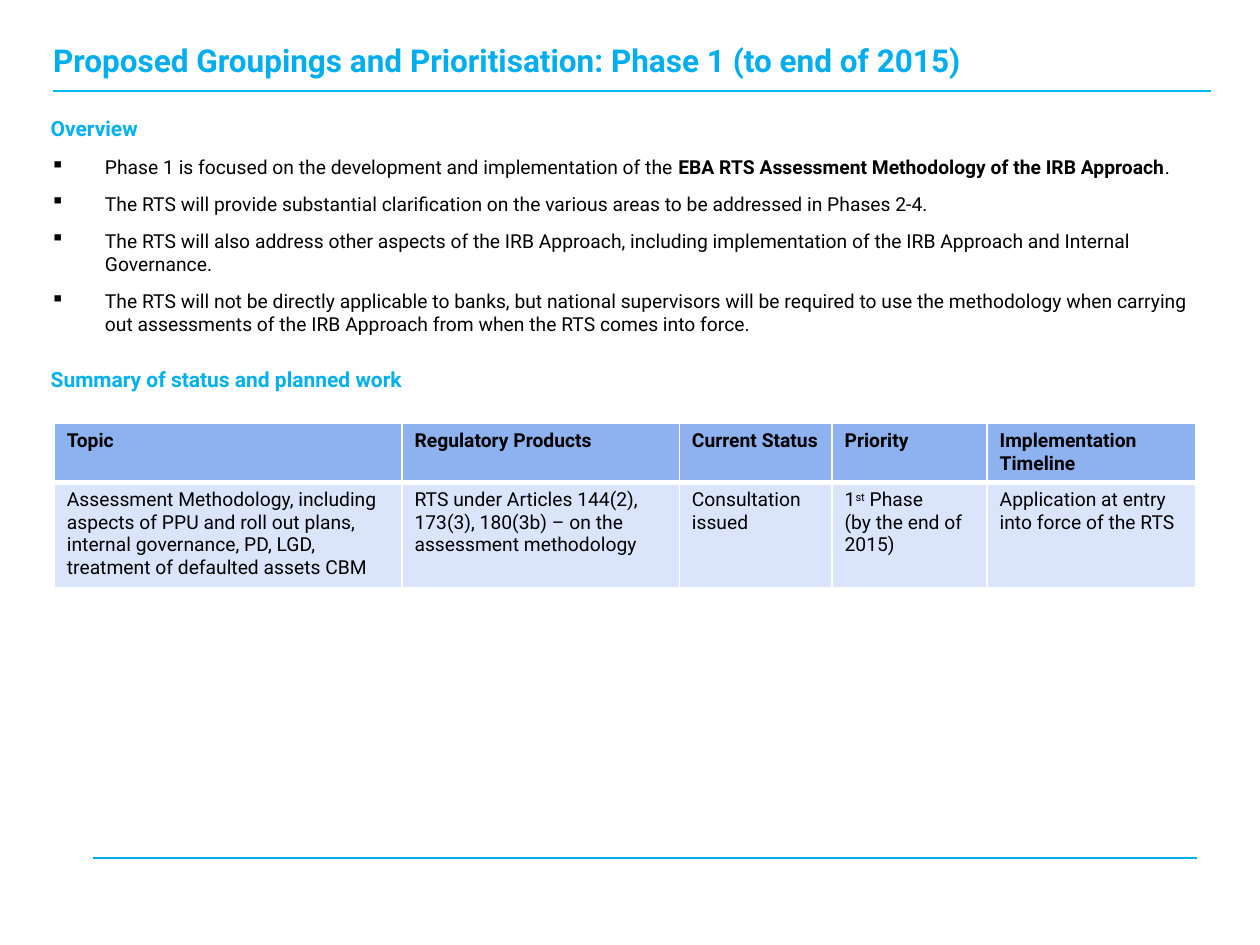
import pptx
import pptx.dml.color
import pptx.enum.shapes
import pptx.enum.text
import pptx.oxml
import pptx.oxml.ns
import pptx.util
from lxml import etree

Pt = pptx.util.Pt
RGBColor = pptx.dml.color.RGBColor
qn = pptx.oxml.ns.qn

BLACK = RGBColor(0x00, 0x00, 0x00)
WHITE = RGBColor(0xFF, 0xFF, 0xFF)
TITLE_BLUE = RGBColor(0x00, 0xAE, 0xEF)
RULE_BLUE = RGBColor(0x00, 0xB9, 0xF1)
HEADING_BLUE = RGBColor(0x00, 0xB0, 0xF0)
HEADER_FILL = RGBColor(0x8D, 0xB2, 0xEF)
BODY_FILL = RGBColor(0xDA, 0xE5, 0xFC)
FONT = "Roboto"
HANGING = 31

BULLETS = [
    [("Phase 1 is focused on the development and implementation of the ", False),
     ("EBA RTS Assessment Methodology of the IRB Approach", True),
     (".", False)],
    [("The RTS will provide substantial clarification on the various areas to be "
      "addressed in Phases 2-4.", False)],
    [("The RTS will also address other aspects of the IRB Approach, including "
      "implementation of the IRB Approach and Internal Governance.", False)],
    [("The RTS will not be directly applicable to banks, but national supervisors will "
      "be required to use the methodology when carrying out assessments of the IRB "
      "Approach from when the RTS comes into force.", False)],
]

COLUMN_WIDTHS = [198.7, 158.5, 87.3, 88.6, 119]
ROW_HEIGHTS = [33.8, 59]
# Each cell is a list of paragraphs, each paragraph a list of runs.
TABLE_ROWS = [
    [[["Topic"]], [["Regulatory Products"]], [["Current Status"]], [["Priority"]],
     [["Implementation Timeline"]]],
    [[["Assessment Methodology, including aspects of PPU and roll out plans, internal "
       "governance, PD, LGD, treatment of defaulted assets CBM"]],
     [["RTS under Articles 144(2), 173(3), 180(3b) – on the assessment methodology"]],
     [["Consultation issued"]],
     [["1", "st", " Phase"], ["(by the end of 2015)"]],
     [["Application at entry into force of the RTS"]]],
]


def add_run(para, text, size, color=BLACK, bold=False):
    span = para.add_run()
    span.text = text
    span.font.name = FONT
    span.font.size = Pt(size)
    span.font.bold = bold
    span.font.color.rgb = color
    return span


def add_rule(page, left, right, y, color, width):
    rule = page.shapes.add_connector(
        pptx.enum.shapes.MSO_CONNECTOR.STRAIGHT, Pt(left), Pt(y), Pt(right), Pt(y))
    rule.line.color.rgb = color
    rule.line.width = Pt(width)
    etree.SubElement(rule._element.spPr, qn("a:effectLst"))


def add_text_frame(page, left, top, width, height):
    """Add a wrapping text box without insets and return its frame."""
    box = page.shapes.add_textbox(Pt(left), Pt(top), Pt(width), Pt(height))
    frame = box.text_frame
    frame.word_wrap = True
    frame.margin_left = frame.margin_top = frame.margin_right = frame.margin_bottom = 0
    return frame


def add_bullet(frame, runs):
    para = frame.add_paragraph()
    props = para._p.get_or_add_pPr()
    props.set("marL", str(Pt(HANGING)))
    props.set("indent", str(-Pt(HANGING)))
    bullet_color = etree.SubElement(props, qn("a:buClr"))
    etree.SubElement(bullet_color, qn("a:srgbClr"), val=str(BLACK))
    etree.SubElement(props, qn("a:buChar"), char="▪")
    para.space_before = Pt(5.3)
    para.space_after = Pt(2.6)
    for text, bold in runs:
        add_run(para, text, 11, bold=bold)


def add_body(page):
    frame = add_text_frame(page, 29, 66.2, 661.5, 417)
    overview = frame.paragraphs[0]
    overview.space_after = Pt(2.6)
    add_run(overview, "Overview", 12, HEADING_BLUE, True)
    for runs in BULLETS:
        add_bullet(frame, runs)
    summary = frame.add_paragraph()
    summary.space_before = Pt(15.4)
    add_run(summary, "Summary of status and planned work", 12, HEADING_BLUE, True)


def set_borders(cell, widths):
    """Draw white borders; widths maps a side (L, R, T, B) to points."""
    props = cell._tc.get_or_add_tcPr()
    for index, (side, width) in enumerate(widths.items()):
        border = etree.Element(qn(f"a:ln{side}"), w=str(Pt(width)))
        fill = etree.SubElement(border, qn("a:solidFill"))
        etree.SubElement(fill, qn("a:srgbClr"), val=str(WHITE))
        props.insert(index, border)


def fill_cell(cell, paragraphs, is_header):
    cell.fill.solid()
    cell.fill.fore_color.rgb = HEADER_FILL if is_header else BODY_FILL
    frame = cell.text_frame
    for index, runs in enumerate(paragraphs):
        para = frame.add_paragraph() if index else frame.paragraphs[0]
        for text in runs:
            span = add_run(para, text, 11, bold=is_header)
            if text == "st":
                span._r.get_or_add_rPr().set("baseline", "30000")
    top, bottom = (1, 3) if is_header else (3, 1)
    set_borders(cell, {"L": 1, "R": 1, "T": top, "B": bottom})


def add_status_table(page):
    table = page.shapes.add_table(
        len(TABLE_ROWS), len(COLUMN_WIDTHS), Pt(31), Pt(242),
        Pt(sum(COLUMN_WIDTHS)), Pt(sum(ROW_HEIGHTS))).table
    for column, width in zip(table.columns, COLUMN_WIDTHS):
        column.width = Pt(width)
    for r, (height, cells) in enumerate(zip(ROW_HEIGHTS, TABLE_ROWS)):
        table.rows[r].height = Pt(height)
        for c, paragraphs in enumerate(cells):
            fill_cell(table.cell(r, c), paragraphs, r == 0)


def add_title(page):
    frame = add_text_frame(page, 30.4, 23.2, 679, 22.3)
    frame.vertical_anchor = pptx.enum.text.MSO_ANCHOR.MIDDLE
    add_run(frame.paragraphs[0],
            "Proposed Groupings and Prioritisation: Phase 1 (to end of 2015)",
            18, TITLE_BLUE, True)


def main():
    deck = pptx.Presentation()
    deck.slide_width, deck.slide_height = Pt(720), Pt(540)
    page = deck.slides.add_slide(deck.slide_layouts[6])
    add_rule(page, 53.4, 684, 490.2, TITLE_BLUE, 1)
    add_rule(page, 30.4, 692, 52, RULE_BLUE, 1.5)
    add_body(page)
    add_title(page)
    add_status_table(page)
    deck.save("out.pptx")


if __name__ == "__main__":
    main()
